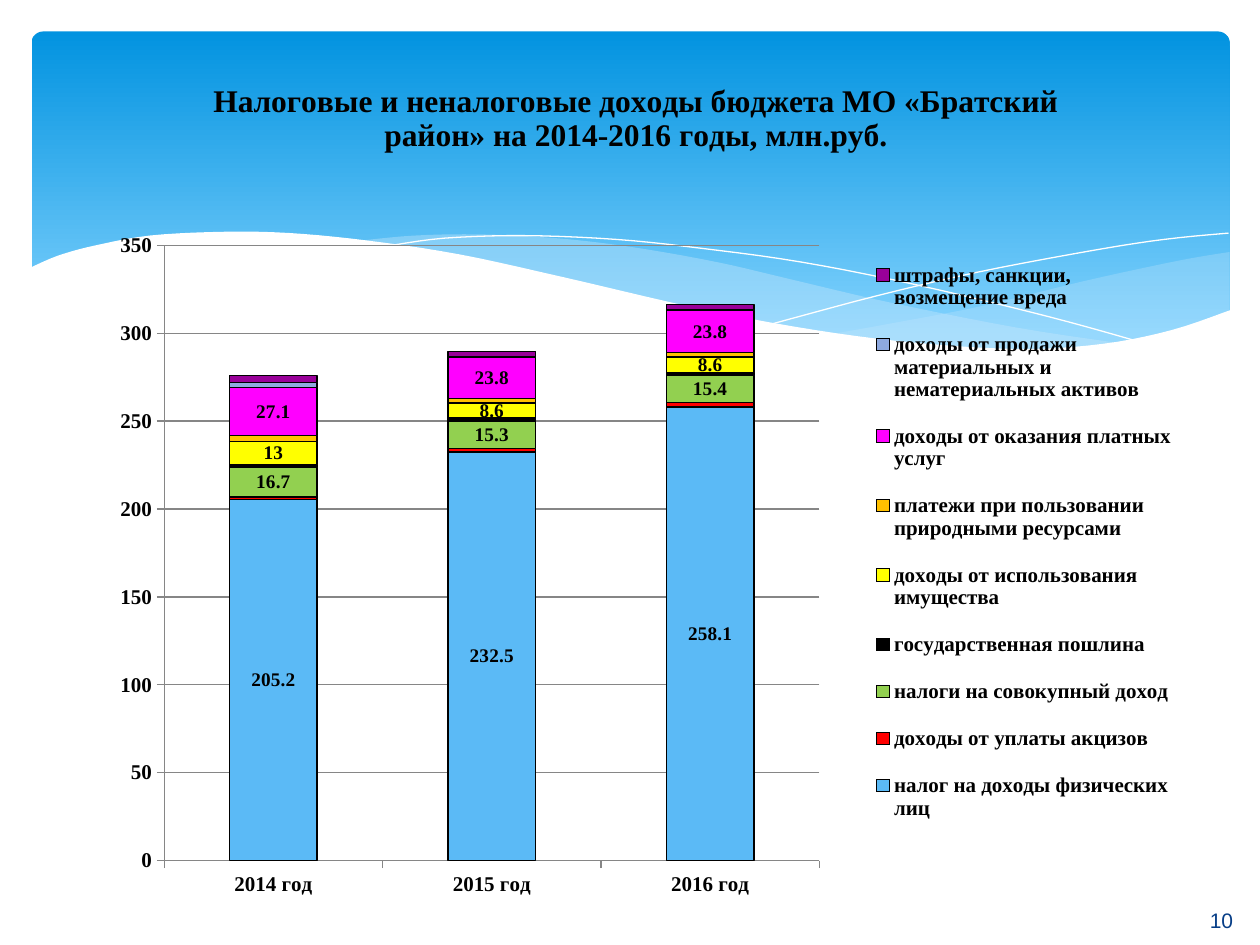
import pptx
import pptx.chart.data
import pptx.dml.color
import pptx.enum.chart
import pptx.enum.shapes
import pptx.enum.text
import pptx.oxml
import pptx.oxml.ns
import pptx.util
from pptx.util import Inches

SERIF = "Times New Roman"
TITLE = "Налоговые и неналоговые доходы бюджета МО «Братский район» на 2014-2016 годы, млн.руб."
YEARS = ["2014 год", "2015 год", "2016 год"]

# Name, values, fill, whether the values are labelled
REVENUES = [
    ("налог на доходы физических лиц", (205.2, 232.5, 258.1), "5BBAF6", True),
    ("доходы от уплаты акцизов", (1.6, 1.9, 2.3), "FF0000", False),
    ("налоги на совокупный доход", (16.7, 15.3, 15.4), "92D050", True),
    ("государственная пошлина", (2, 2, 2), "000000", False),
    ("доходы от использования имущества", (13, 8.6, 8.6), "FFFF00", True),
    ("платежи при пользовании природными ресурсами", (3.4, 2.4, 2.7), "FFC000", False),
    ("доходы от оказания платных услуг", (27.1, 23.8, 23.8), "FF00FF", True),
    ("доходы от продажи материальных и нематериальных активов", (3, 0.3, 0.5), "8EA9DF", False),
    ("штрафы, санкции, возмещение вреда", (4, 2.9, 3), "990099", False),
]

# Edges of the waves, as points that a smooth curve runs through
RIGHT_TOP = [(9.76, 2), (9.35, 2.07), (8.61, 2.23), (7.79, 2.43), (7.06, 2.57), (6.61, 2.65)]
RIGHT_BOTTOM = [(6.61, 2.65), (7.18, 2.73), (7.81, 2.77), (8.35, 2.77), (8.89, 2.72),
                (9.35, 2.62), (9.76, 2.47)]
MIDDLE_TOP = [(8.93, 2.73), (8.07, 2.6), (7.06, 2.4), (6.29, 2.22), (5.69, 2.08),
              (5.01, 1.96), (4.41, 1.89), (3.8, 1.86), (3.28, 1.87), (2.86, 1.91)]
MIDDLE_BOTTOM = [(2.86, 1.91), (3.62, 2.03), (4.49, 2.22), (5.3, 2.4), (6.01, 2.55),
                 (6.8, 2.68), (7.48, 2.76), (8.07, 2.79), (8.57, 2.77), (8.93, 2.73)]
LONG_LINE = [(3.09, 1.95), (3.53, 1.89), (4.16, 1.87), (4.89, 1.9), (5.56, 1.97),
             (6.36, 2.08), (7.27, 2.26), (8.31, 2.51), (9.07, 2.72)]
SHORT_LINE = [(6.13, 2.57), (6.95, 2.35), (7.76, 2.16), (8.66, 1.99), (9.24, 1.9), (9.75, 1.85)]
WHITE_TOP = [(9.77, 2.46), (9.3, 2.62), (8.75, 2.73), (8.09, 2.77), (7.26, 2.72),
             (6.47, 2.62), (5.55, 2.45), (4.47, 2.2), (3.65, 2.02), (2.92, 1.91),
             (2.3, 1.85), (1.77, 1.84), (1.19, 1.87), (0.75, 1.95), (0.46, 2.03), (0.23, 2.13)]


def color(value):
    return pptx.dml.color.RGBColor.from_string(value)


def smooth(knots, steps=5):
    """Return points on a Catmull-Rom curve through the knots."""
    padded = [knots[0], *knots, knots[-1]]
    points = [knots[0]]
    for a, b, c, d in zip(padded, padded[1:], padded[2:], padded[3:]):
        for step in range(1, steps + 1):
            t = step / steps
            points.append(tuple(
                0.5 * (2 * q + (r - p) * t + (2 * p - 5 * q + 4 * r - s) * t ** 2
                       + (3 * q - p - 3 * r + s) * t ** 3)
                for p, q, r, s in zip(a, b, c, d)))
    return points


def add_wave(slide, points, fill=None, opacity=100):
    """Add a filled wave, or a thin white curve when there is no fill."""
    points = [(Inches(x), Inches(y)) for x, y in points]
    builder = slide.shapes.build_freeform(*points[0], scale=1.0)
    builder.add_line_segments(points[1:], close=fill is not None)
    shape = builder.convert_to_shape()
    shape.shadow.inherit = False
    if fill is None:
        shape.fill.background()
        shape.line.color.rgb = color("FFFFFF")
        shape.line.width = pptx.util.Pt(0)
        return
    shape.line.fill.background()
    shape.fill.solid()
    shape.fill.fore_color.rgb = color(fill)
    if opacity < 100:
        srgb = shape.fill._xPr.find(".//" + pptx.oxml.ns.qn("a:srgbClr"))
        alpha = srgb.makeelement(pptx.oxml.ns.qn("a:alpha"), {"val": str(opacity * 1000)})
        srgb.append(alpha)


def add_banner(slide):
    banner = slide.shapes.add_shape(
        pptx.enum.shapes.MSO_SHAPE.ROUNDED_RECTANGLE,
        Inches(0.25), Inches(0.25), Inches(9.51), Inches(2.7))
    banner.adjustments[0] = 0.034
    banner.shadow.inherit = False
    banner.line.fill.background()
    banner.fill.gradient()
    banner.fill.gradient_angle = 270
    for stop, value, position in zip(banner.fill.gradient_stops, ("0293E0", "83D3FE"), (0, 0.9)):
        stop.color.rgb = color(value)
        stop.position = position


def add_page_number(slide, number):
    box = slide.shapes.add_textbox(Inches(9.06), Inches(7.1), Inches(1.27), Inches(0.4))
    frame = box.text_frame
    frame.word_wrap = True
    frame.vertical_anchor = pptx.enum.text.MSO_ANCHOR.MIDDLE
    frame.text = number
    frame.paragraphs[0].alignment = pptx.enum.text.PP_ALIGN.CENTER
    style_font(frame.paragraphs[0].runs[0].font, 12, "073E87", "Arial", False)


def style_font(font, size, value="000000", name=SERIF, bold=True):
    font.size = pptx.util.Pt(size)
    font.name = name
    font.bold = bold
    font.color.rgb = color(value)


def set_layout(parent, index, inner=False, **fractions):
    """Place a chart part by fractions of the chart's size."""
    for old in parent.findall(pptx.oxml.ns.qn("c:layout")):
        parent.remove(old)
    target = '<c:layoutTarget val="inner"/>' if inner else ""
    modes = "".join(f'<c:{key}Mode val="edge"/>' for key in "xy")
    values = "".join(f'<c:{key} val="{value}"/>' for key, value in fractions.items())
    parent.insert(index, pptx.oxml.parse_xml(
        f'<c:layout {pptx.oxml.ns.nsdecls("c")}><c:manualLayout>'
        f'{target}{modes}{values}</c:manualLayout></c:layout>'))


def style_axis(axis):
    style_font(axis.tick_labels.font, 12)
    axis.major_tick_mark = pptx.enum.chart.XL_TICK_MARK.OUTSIDE
    axis.format.line.color.rgb = color("868686")


def style_series(series, fill, labelled):
    series.format.fill.solid()
    series.format.fill.fore_color.rgb = color(fill)
    series.format.line.color.rgb = color("000000")
    series.format.line.width = pptx.util.Pt(0.75)
    if labelled:
        series.data_labels.show_value = True
        style_font(series.data_labels.font, 11)


def add_revenue_chart(slide):
    data = pptx.chart.data.CategoryChartData()
    data.categories = YEARS
    for name, values, _, _ in REVENUES:
        data.add_series(name, values)
    chart = slide.shapes.add_chart(
        pptx.enum.chart.XL_CHART_TYPE.COLUMN_STACKED,
        Inches(0.47), Inches(0.39), Inches(9.06), Inches(6.86), data).chart
    style_font(chart.font, 10, name="Cabin", bold=False)

    # Title
    chart.has_title = True
    chart.chart_title.text_frame.text = TITLE
    style_font(chart.chart_title.text_frame.paragraphs[0].runs[0].font, 18)
    chart.chart_title.include_in_layout = False
    set_layout(chart.chart_title._element, 1, x=0.13, y=0.03)

    # Columns
    plot = chart.plots[0]
    plot.gap_width = 150
    plot.overlap = 100
    plot.vary_by_categories = False
    for series, (_, _, fill, labelled) in zip(plot.series, REVENUES):
        style_series(series, fill, labelled)
    set_layout(chart._chartSpace.chart.plotArea, 0, inner=True, x=0.092, y=0.227, w=0.574, h=0.712)

    # Axes
    style_axis(chart.category_axis)
    style_axis(chart.value_axis)
    chart.value_axis.minimum_scale = 0
    chart.value_axis.maximum_scale = 350
    chart.value_axis.major_unit = 50
    chart.value_axis.major_gridlines.format.line.color.rgb = color("868686")

    # Legend
    chart.has_legend = True
    chart.legend.position = pptx.enum.chart.XL_LEGEND_POSITION.RIGHT
    chart.legend.include_in_layout = False
    style_font(chart.legend.font, 12)
    set_layout(chart.legend._element, 1, x=0.71, y=0.22, w=0.27, h=0.7)


def main():
    presentation = pptx.Presentation()
    presentation.slide_width = Inches(10)
    presentation.slide_height = Inches(7.5)
    slide = presentation.slides.add_slide(presentation.slide_layouts[6])

    # Background banner and waves
    add_banner(slide)
    add_wave(slide, smooth(RIGHT_TOP) + smooth(RIGHT_BOTTOM), "C6E7FC", 29)
    add_wave(slide, smooth(MIDDLE_TOP) + smooth(MIDDLE_BOTTOM), "C6E7FC", 40)
    add_wave(slide, smooth(LONG_LINE))
    add_wave(slide, smooth(SHORT_LINE))
    add_wave(slide, smooth(WHITE_TOP) + [(0.23, 3.29), (9.77, 3.29)], "FFFFFF")

    # Content
    add_page_number(slide, "10")
    add_revenue_chart(slide)
    presentation.save("out.pptx")


if __name__ == "__main__":
    main()
